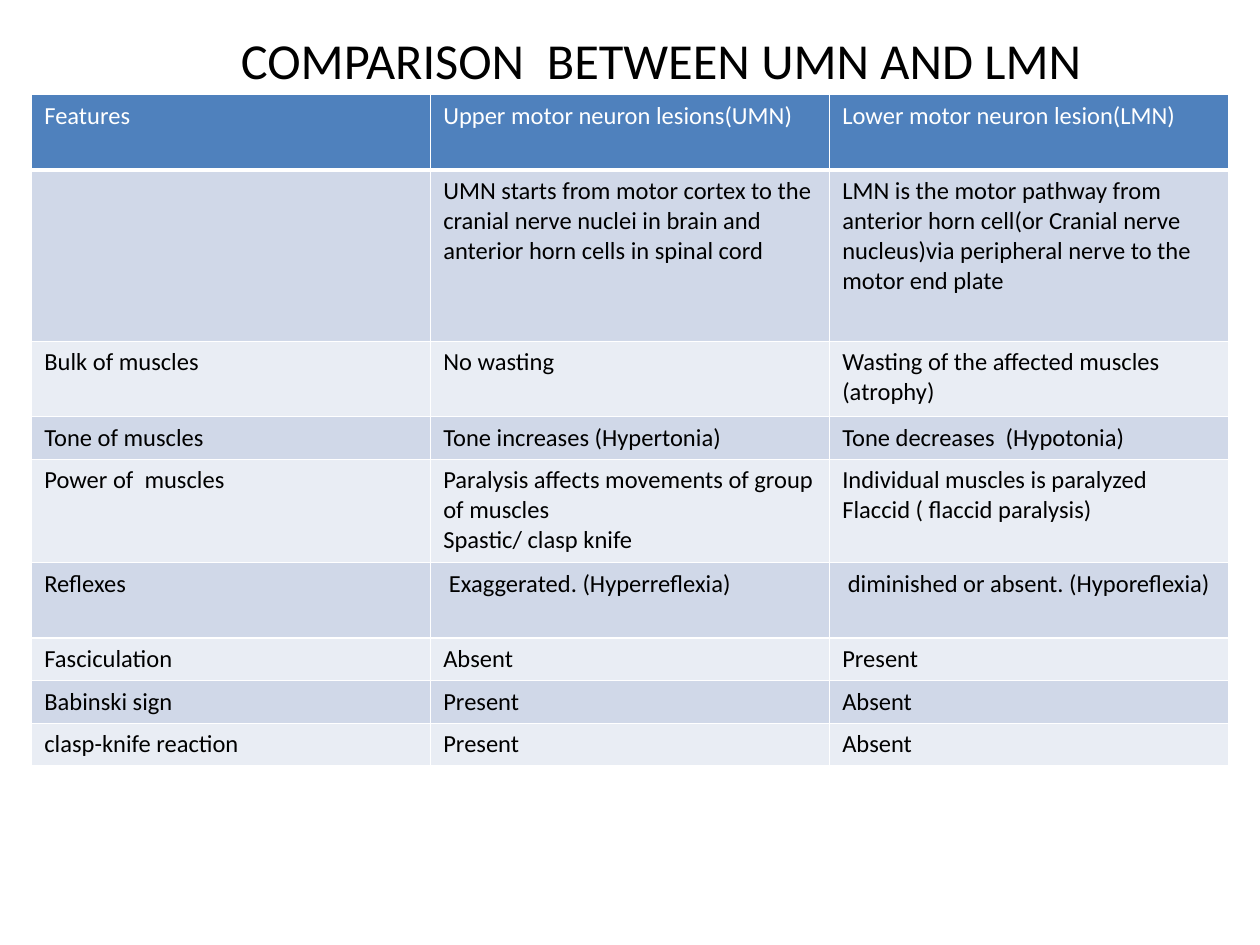
from pptx import Presentation, util as u
from pptx.dml import color
from pptx.enum import text
from pptx.oxml import parse_xml
from pptx.oxml.ns import nsdecls

WHITE, BLACK = "FFFFFF", "000000"
HEADER, BAND_DARK, BAND_LIGHT = "4F81BD", "D0D8E8", "E9EDF4"

ROWS = [
    ("Features", "Upper motor neuron lesions(UMN)",
     "Lower motor neuron lesion(LMN)"),
    ("",
     "UMN starts from motor cortex to the cranial nerve nuclei in brain "
     "and anterior horn cells in spinal cord",
     "LMN is the motor pathway from anterior horn cell(or Cranial nerve "
     "nucleus)via peripheral nerve to the motor end plate"),
    ("Bulk of muscles", "No wasting",
     "Wasting of the affected muscles (atrophy)"),
    ("Tone of muscles", "Tone increases (Hypertonia)",
     "Tone decreases  (Hypotonia)"),
    ("Power of  muscles",
     "Paralysis affects movements of group of muscles\nSpastic/ clasp knife",
     "Individual muscles is paralyzed\nFlaccid ( flaccid paralysis)"),
    ("Reflexes", " Exaggerated. (Hyperreflexia)",
     " diminished or absent. (Hyporeflexia)"),
    ("Fasciculation", "Absent", "Present"),
    ("Babinski sign", "Present", "Absent"),
    ("clasp-knife reaction", "Present", "Absent"),
]
ROW_HEIGHTS = [1.52, 3.45, 1.52, 0.86, 2.08, 1.52, 0.86, 0.86, 0.86]


def rgb(value):
    return color.RGBColor.from_string(value)


class SlideBuilder:
    """Holds the text style and the current slide."""

    def __init__(self, page):
        self.page = page
        self.font_name = "Calibri"

    def style(self, frame, size, colour):
        values = {"name": self.font_name, "size": u.Pt(size), "bold": False}
        for para in frame.paragraphs:
            for span in (para, *para.runs):
                for key, value in values.items():
                    setattr(span.font, key, value)
                span.font.color.rgb = rgb(colour)

    def title(self, wording, left, top, width, height):
        box = self.page.shapes.title
        place = {"left": left, "top": top, "width": width, "height": height}
        for key, value in place.items():
            setattr(box, key, u.Cm(value))
        frame = box.text_frame
        frame.text = wording
        frame.vertical_anchor = text.MSO_ANCHOR.TOP
        frame.paragraphs[0].alignment = text.PP_ALIGN.CENTER
        self.style(frame, 28.8, BLACK)

    def borders(self, cell, bottom):
        for side, points in {"L": 1, "R": 1, "T": 1, "B": bottom}.items():
            cell._tc.get_or_add_tcPr().append(parse_xml(
                f'<a:ln{side} {nsdecls("a")} w="{u.Pt(points)}"><a:solidFill>'
                f'<a:srgbClr val="{WHITE}"/></a:solidFill></a:ln{side}>'))

    def table(self, rows, heights, left, top, width):
        columns = len(rows[0])
        grid = self.page.shapes.add_table(
            len(rows), columns, u.Cm(left), u.Cm(top),
            u.Cm(width), u.Cm(sum(heights))).table
        for column in grid.columns:
            column.width = u.Cm(width / columns)
        for r, (wordings, height) in enumerate(zip(rows, heights)):
            grid.rows[r].height = u.Cm(height)
            band = BAND_DARK if r % 2 else BAND_LIGHT
            for c, wording in enumerate(wordings):
                cell = grid.cell(r, c)
                cell.text = wording
                self.borders(cell, bottom=1 if r else 3)
                cell.fill.solid()
                cell.fill.fore_color.rgb = rgb(band if r else HEADER)
                self.style(cell.text_frame, 14, BLACK if r else WHITE)


def main():
    deck = Presentation()
    deck.slide_width, deck.slide_height = u.Cm(25.4), u.Cm(19.05)
    builder = SlideBuilder(deck.slides.add_slide(deck.slide_layouts[5]))

    # Heading
    builder.title("COMPARISON  BETWEEN UMN AND LMN", 2.54, 0.46, 21.59, 4.11)

    # Comparison table
    builder.table(ROWS, ROW_HEIGHTS, 0.64, 1.91, 24.13)

    deck.save("out.pptx")


if __name__ == "__main__":
    main()
